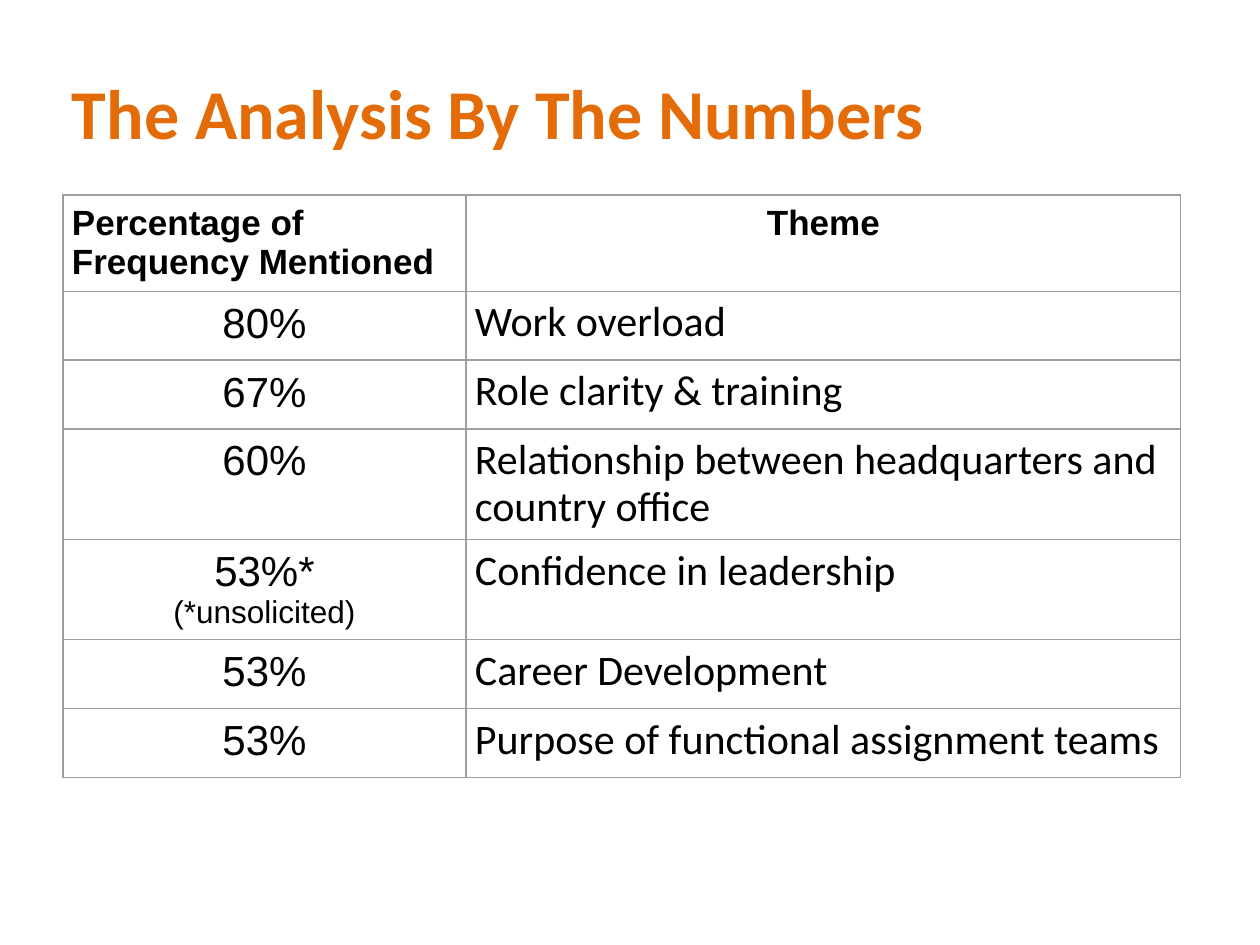
from lxml import etree
from pptx import Presentation
from pptx.dml.color import RGBColor
from pptx.enum.text import MSO_ANCHOR, PP_ALIGN
from pptx.oxml.ns import qn
from pptx.util import Pt

LEFT, CENTER = PP_ALIGN.LEFT, PP_ALIGN.CENTER
MIDDLE, TOP = MSO_ANCHOR.MIDDLE, MSO_ANCHOR.TOP

TITLE = "The Analysis By The Numbers"
HEADERS = ["Percentage of Frequency Mentioned", "Theme"]
THEMES = [
    (["80%"], "Work overload"),
    (["67%"], "Role clarity & training"),
    (["60%"], "Relationship between headquarters and country office"),
    (["53%*", "(*unsolicited)"], "Confidence in leadership"),
    (["53%"], "Career Development"),
    (["53%"], "Purpose of functional assignment teams"),
]

COLORS = {"title": "E36C09", "text": "000000", "border": "9E9E9E"}
PX = 914400 // 126
MARGIN = 9
COLUMN_WIDTHS = [403, 715]
ROW_HEIGHT = 69
TITLE_BOX = {"left": 63, "top": 38, "width": 1134, "height": 158}
TABLE_BOX = {"left": 63, "top": 195, "width": sum(COLUMN_WIDTHS), "height": 597}

TITLE_FONT = {"name": "Calibri", "size": Pt(40), "bold": True}
HEADER_FONT = {"name": "Arial", "size": Pt(20), "bold": True}
PERCENT_FONT = {"name": "Arial", "size": Pt(24), "bold": False}
NOTE_FONT = {"name": "Arial", "size": Pt(18), "bold": False}
THEME_FONT = {"name": "Calibri", "size": Pt(24), "bold": False}


def apply(target, values):
    for name, value in values.items():
        setattr(target, name, value)


def write(para, text, font, color, align, spacing=None):
    para.alignment = align
    if spacing:
        para.line_spacing = spacing
    span = para.add_run()
    span.text = text
    apply(span.font, font)
    span.font.color.rgb = RGBColor.from_string(COLORS[color])


def outline(cell):
    properties = cell._tc.get_or_add_tcPr()
    for index, side in enumerate(("lnL", "lnR", "lnT", "lnB")):
        line = etree.Element(qn(f"a:{side}"), w=str(Pt(0.75)))
        fill = etree.SubElement(line, qn("a:solidFill"))
        etree.SubElement(fill, qn("a:srgbClr"), val=COLORS["border"])
        properties.insert(index, line)


def fill_cell(cell, lines, align, spacing=None):
    cell.fill.background()
    cell.vertical_anchor = TOP
    for side in ("left", "right", "top", "bottom"):
        setattr(cell, f"margin_{side}", MARGIN * PX)
    outline(cell)
    frame = cell.text_frame
    for index, (text, font) in enumerate(lines):
        para = frame.add_paragraph() if index else frame.paragraphs[0]
        write(para, text, font, "text", align, spacing)


def add_title(page):
    box = page.shapes.title
    apply(box, {name: value * PX for name, value in TITLE_BOX.items()})
    frame = box.text_frame
    apply(frame, {"vertical_anchor": MIDDLE, "word_wrap": True,
                  "margin_left": 9 * PX, "margin_right": 9 * PX,
                  "margin_top": 5 * PX, "margin_bottom": 5 * PX})
    write(frame.paragraphs[0], TITLE, TITLE_FONT, "title", LEFT, 0.9)


def add_themes(page):
    place = {name: value * PX for name, value in TABLE_BOX.items()}
    holder = page.shapes.add_table(len(THEMES) + 1, len(HEADERS), **place)
    table = holder.table
    apply(table, {"first_row": False, "horz_banding": False})
    for column, width in zip(table.columns, COLUMN_WIDTHS):
        column.width = width * PX
    for row in table.rows:
        row.height = ROW_HEIGHT * PX
    holder.height = place["height"]
    for column, (text, align) in enumerate(zip(HEADERS, (LEFT, CENTER))):
        fill_cell(table.cell(0, column), [(text, HEADER_FONT)], align)
    for row, (figures, theme) in enumerate(THEMES, 1):
        lines = list(zip(figures, (PERCENT_FONT, NOTE_FONT)))
        fill_cell(table.cell(row, 0), lines, CENTER)
        fill_cell(table.cell(row, 1), [(theme, THEME_FONT)], LEFT, 0.9)


def main():
    deck = Presentation()
    apply(deck, {"slide_width": 1260 * PX, "slide_height": 945 * PX})
    page = deck.slides.add_slide(deck.slide_layouts[5])
    add_title(page)
    add_themes(page)
    deck.save("out.pptx")


if __name__ == "__main__":
    main()
